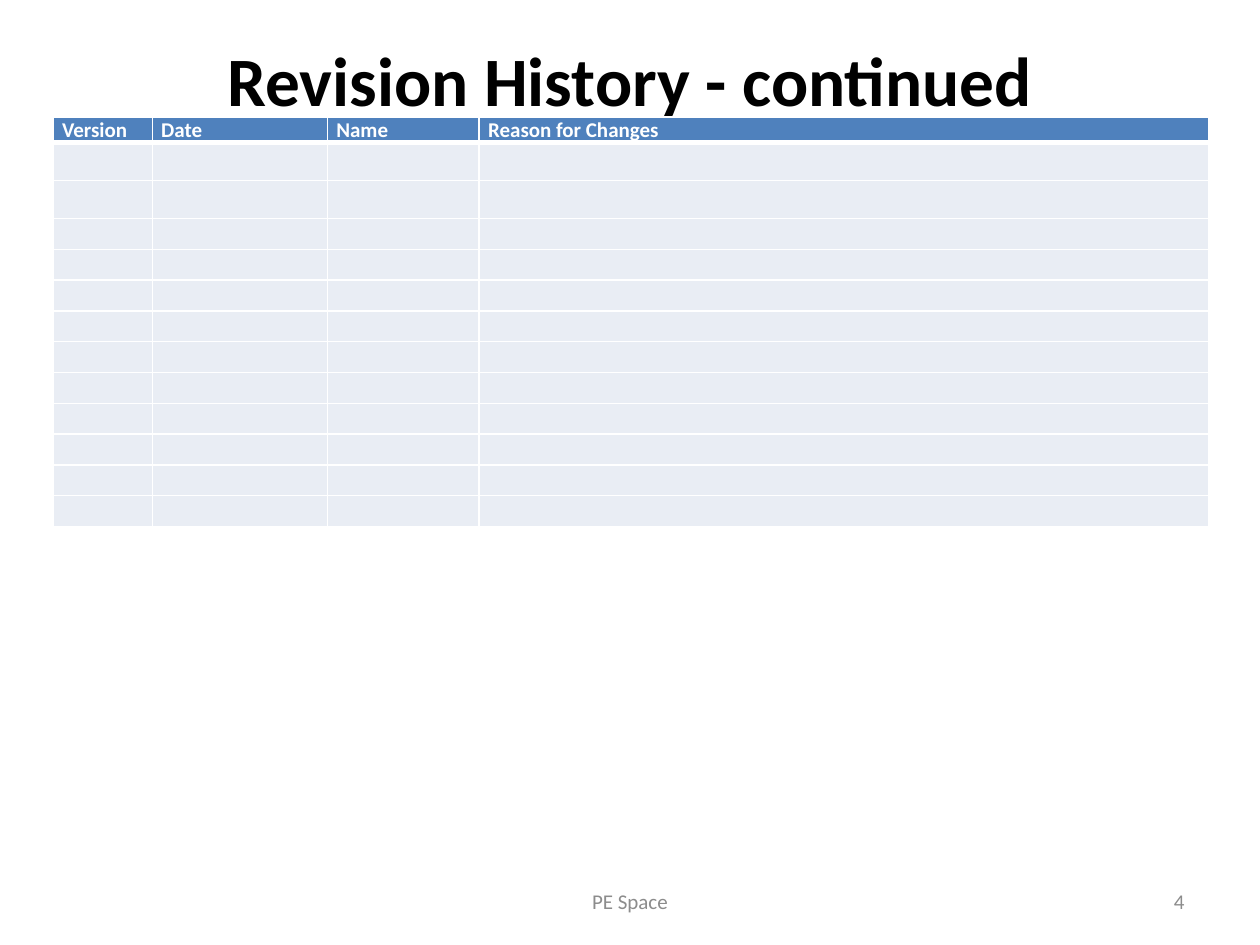
import pptx
import pptx.util
import pptx.dml.color
import pptx.enum.text
import pptx.oxml
import pptx.oxml.ns

Cm = pptx.util.Cm
Pt = pptx.util.Pt
Align = pptx.enum.text.PP_ALIGN
Anchor = pptx.enum.text.MSO_ANCHOR
hues = {"black": "000000", "white": "FFFFFF", "gray": "8C8C8C",
        "head": "4F81BD", "body": "E9EDF4"}


def write(frame, text, size=12, hue="black", bold=False, align=Align.LEFT):
    par = frame.paragraphs[0]
    par.alignment = align
    run = par.add_run()
    run.text = text
    run.font.name = "Calibri"
    run.font.size = Pt(size)
    run.font.bold = bold
    run.font.color.rgb = pptx.dml.color.RGBColor.from_string(hues[hue])


def edge(cell, side, width):
    line = pptx.oxml.parse_xml(
        f'<a:{side} {pptx.oxml.ns.nsdecls("a")} w="{Pt(width)}"><a:solidFill>'
        f'<a:srgbClr val="{hues["white"]}"/></a:solidFill></a:{side}>')
    props = cell._tc.get_or_add_tcPr()
    props.insert(len(props) - 1, line)


deck = pptx.Presentation()
deck.slide_width = Cm(25.4)
deck.slide_height = Cm(19.05)
slide = deck.slides.add_slide(deck.slide_layouts[6])

labels = [
    ("Revision History - continued", (1.27, 0.76, 22.86, 3.18), Anchor.TOP,
     dict(size=39.6, bold=True, align=Align.CENTER)),
    ("PE Space", (8.68, 17.65, 8.04, 1.02), Anchor.MIDDLE,
     dict(hue="gray", align=Align.CENTER)),
    ("4", (18.2, 17.65, 5.93, 1.02), Anchor.MIDDLE,
     dict(hue="gray", align=Align.RIGHT)),
]
for text, place, anchor, style in labels:
    box = slide.shapes.add_textbox(*[Cm(n) for n in place])
    frame = box.text_frame
    frame.word_wrap = True
    frame.vertical_anchor = anchor
    frame.margin_top = frame.margin_bottom = 0
    write(frame, text, **style)

heads = ["Version", "Date", "Name", "Reason for Changes"]
widths = [2.0, 3.53, 3.06, 14.7]
heights = [0.5] + [0.77] * 2 + [0.62] * 10
table = slide.shapes.add_table(
    len(heights), len(widths), Cm(1.07), Cm(2.36),
    Cm(sum(widths)), Cm(sum(heights))).table
for col, width in zip(table.columns, widths):
    col.width = Cm(width)
for i, height in enumerate(heights):
    row = table.rows[i]
    row.height = Cm(height)
    for j, cell in enumerate(row.cells):
        cell.margin_left = cell.margin_right = Cm(0.18)
        cell.margin_top = cell.margin_bottom = 0
        cell.fill.solid()
        hue = hues["body" if i else "head"]
        cell.fill.fore_color.rgb = pptx.dml.color.RGBColor.from_string(hue)
        for side in ("lnL", "lnR", "lnT", "lnB"):
            thick = (i, side) in ((0, "lnB"), (1, "lnT"))
            edge(cell, side, 3 if thick else 1)
        if i == 0:
            write(cell.text_frame, heads[j], hue="white", bold=True)
        else:
            par = cell.text_frame.paragraphs[0]
            par._p.get_or_add_endParaRPr().set("sz", "1200")

deck.save("out.pptx")
